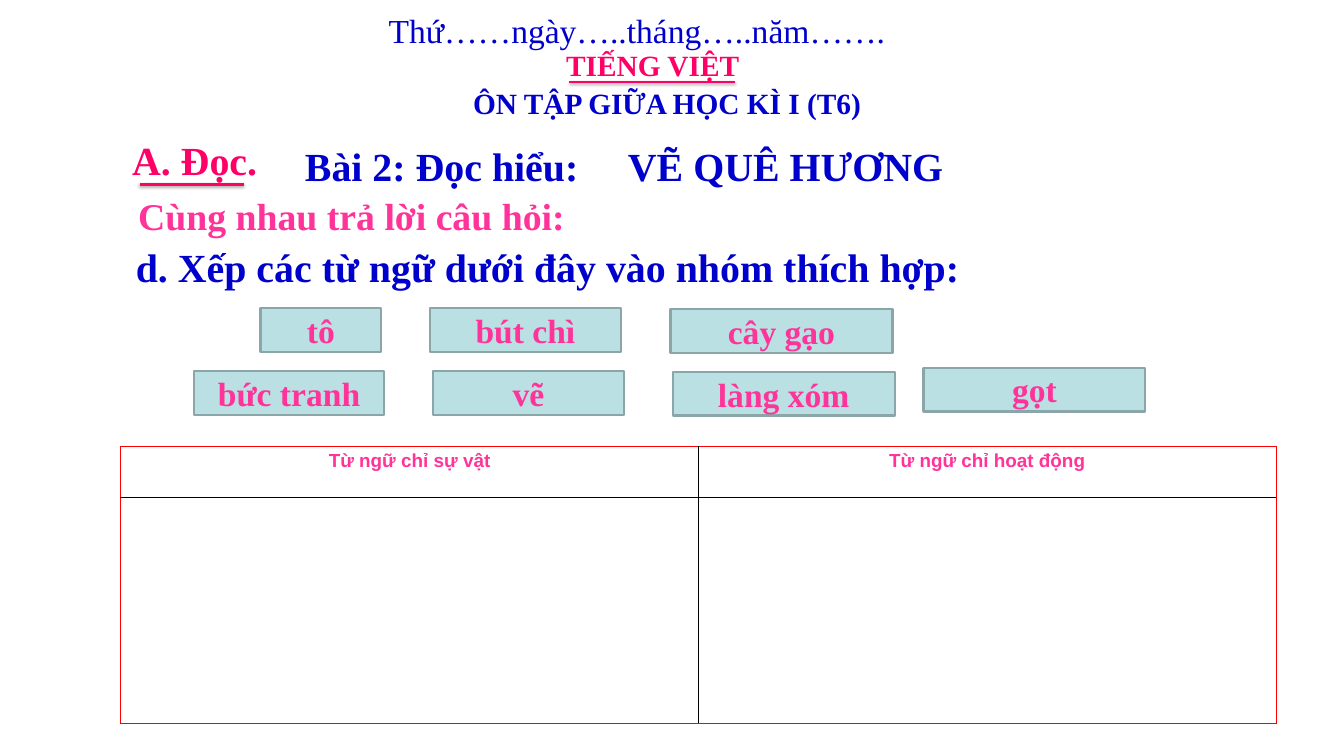
"""Build a Vietnamese reading exercise page with word cards and a sorting table."""
import dataclasses

import pptx
import pptx.dml.color
import pptx.enum.shapes
import pptx.enum.text
import pptx.oxml
import pptx.oxml.ns
import pptx.util

Pt = pptx.util.Pt
ALIGN = pptx.enum.text.PP_ALIGN
ANCHOR = pptx.enum.text.MSO_ANCHOR


@dataclasses.dataclass(frozen=True)
class Theme:
    serif: str = "Times New Roman"
    sans: str = "Arial"
    blue: str = "0000CC"
    crimson: str = "FF0066"
    pink: str = "FF3399"
    card: str = "BBE0E3"
    card_edge: str = "8AA6A8"
    table_edge: str = "FF0000"
    table_rule: str = "000000"
    heading: int = 38
    prompt: int = 36
    word: int = 32
    subject: int = 28
    cell: int = 18


def rgb(value):
    return pptx.dml.color.RGBColor.from_string(value)


def element(markup):
    namespace = pptx.oxml.ns.nsdecls("a")
    return pptx.oxml.parse_xml(markup.replace(" ", f" {namespace} ", 1))


def write(frame, text, *, font, size, color, bold=True, align=ALIGN.LEFT,
          anchor=ANCHOR.TOP, tab=None):
    frame.word_wrap = True
    frame.vertical_anchor = anchor
    para = frame.paragraphs[0]
    para.alignment = align
    if tab:
        stops = f'<a:tabLst ><a:tab pos="{Pt(tab)}" algn="l"/></a:tabLst>'
        para._p.get_or_add_pPr().append(element(stops))
    span = para.add_run()
    span.text = text
    span.font.name = font
    span.font.size = Pt(size)
    span.font.bold = bold
    span.font.color.rgb = rgb(color)


class Page:
    def __init__(self, deck, theme):
        self.theme = theme
        self.slide = deck.slides.add_slide(deck.slide_layouts[5])
        self.shapes = self.slide.shapes

    def title(self, text, left, top, width, height):
        box = self.shapes.title
        box.left, box.top, box.width, box.height = map(Pt, (left, top, width, height))
        box.text_frame.auto_size = pptx.enum.text.MSO_AUTO_SIZE.NONE
        write(box.text_frame, text, font=self.theme.serif, size=self.theme.subject,
              color=self.theme.blue, align=ALIGN.CENTER)

    def label(self, text, left, top, width, height, **style):
        box = self.shapes.add_textbox(*map(Pt, (left, top, width, height)))
        write(box.text_frame, text, font=self.theme.serif, **style)

    def underline(self, left, right, y, weight, opacity):
        line = self.shapes.add_connector(
            pptx.enum.shapes.MSO_CONNECTOR.STRAIGHT, Pt(left), Pt(y), Pt(right), Pt(y))
        line.line.color.rgb = rgb(self.theme.crimson)
        line.line.width = Pt(weight)
        line._element.spPr.append(element(
            f'<a:effectLst ><a:outerShdw blurRad="{Pt(3.1)}" dist="{Pt(1.7)}" '
            f'dir="5400000" rotWithShape="0"><a:srgbClr val="000000">'
            f'<a:alpha val="{opacity * 1000}"/></a:srgbClr></a:outerShdw></a:effectLst>'))

    def card(self, text, left, top, width, height=41.8):
        box = self.shapes.add_shape(pptx.enum.shapes.MSO_SHAPE.RECTANGLE,
                                    *map(Pt, (left, top, width, height)))
        box.shadow.inherit = False
        box.fill.solid()
        box.fill.fore_color.rgb = rgb(self.theme.card)
        box.line.color.rgb = rgb(self.theme.card_edge)
        box.line.width = Pt(2)
        write(box.text_frame, text, font=self.theme.serif, size=self.theme.word,
              color=self.theme.pink, align=ALIGN.CENTER, anchor=ANCHOR.MIDDLE)

    def sorting_table(self, headers, left, top, width, heights):
        count = len(headers)
        frame = self.shapes.add_table(len(heights), count, Pt(left), Pt(top),
                                      Pt(width), Pt(sum(heights)))
        table = frame.table
        table.first_row = table.horz_banding = False
        for column in table.columns:
            column.width = Pt(width / count)
        for r, height in enumerate(heights):
            table.rows[r].height = Pt(height)
            for c in range(count):
                cell = table.cell(r, c)
                outer = {"L": c == 0, "R": c == count - 1,
                         "T": r == 0, "B": r == len(heights) - 1}
                self.borders(cell, outer)
                cell.fill.background()
        for c, text in enumerate(headers):
            write(table.cell(0, c).text_frame, text, font=self.theme.sans,
                  size=self.theme.cell, color=self.theme.pink, align=ALIGN.CENTER)

    def borders(self, cell, outer):
        for side, is_outer in outer.items():
            color = self.theme.table_edge if is_outer else self.theme.table_rule
            cell._tc.get_or_add_tcPr().append(element(
                f'<a:ln{side} w="{Pt(1)}"><a:solidFill><a:srgbClr val="{color}"/>'
                f'</a:solidFill></a:ln{side}>'))


def main():
    deck = pptx.Presentation()
    deck.slide_width, deck.slide_height = Pt(1281.6), Pt(720)
    theme = Theme()
    page = Page(deck, theme)

    page.label("Thứ……ngày…..tháng…..năm…….", 363.6, 5.8, 492.5, 46,
               size=theme.word, color=theme.blue, bold=False)
    page.label("TIẾNG VIỆT", 532.8, 41.8, 181.4, 41,
               size=theme.subject, color=theme.crimson)
    page.underline(542.9, 701.3, 77.8, weight=2, opacity=38)
    page.title("ÔN TẬP GIỮA HỌC KÌ I (T6)", 442, 77.8, 388, 41)

    page.label("A. Đọc.", 118.8, 126, 329.8, 53.3,
               size=theme.heading, color=theme.crimson)
    page.underline(133.2, 232.6, 175.7, weight=3, opacity=35)
    page.label("Bài 2: Đọc hiểu:\tVẼ QUÊ HƯƠNG", 283.7, 131.8, 656.6, 53.3,
               size=theme.heading, color=theme.blue, tab=308)
    page.label("Cùng nhau trả lời câu hỏi:", 124.6, 180, 525.6, 51,
               size=theme.prompt, color=theme.pink)
    page.label("d. Xếp các từ ngữ dưới đây vào nhóm thích hợp:", 122.4, 228.2, 902.9, 53.3,
               size=theme.heading, color=theme.blue)

    for word, left, top, width in (
            ("tô", 248.4, 293.8, 115.2),
            ("bút chì", 410.4, 293.8, 181.4),
            ("cây gạo", 639.4, 294.5, 211.7),
            ("bức tranh", 185, 354.2, 181.4),
            ("vẽ", 413.3, 354.2, 181.4),
            ("làng xóm", 641.5, 354.5, 211.7),
            ("gọt", 880.6, 350.6, 211.7)):
        page.card(word, left, top, width)

    page.sorting_table(("Từ ngữ chỉ sự vật", "Từ ngữ chỉ hoạt động"),
                       115.2, 426.2, 1101.6, (48.2, 216))
    deck.save("out.pptx")


if __name__ == "__main__":
    main()
